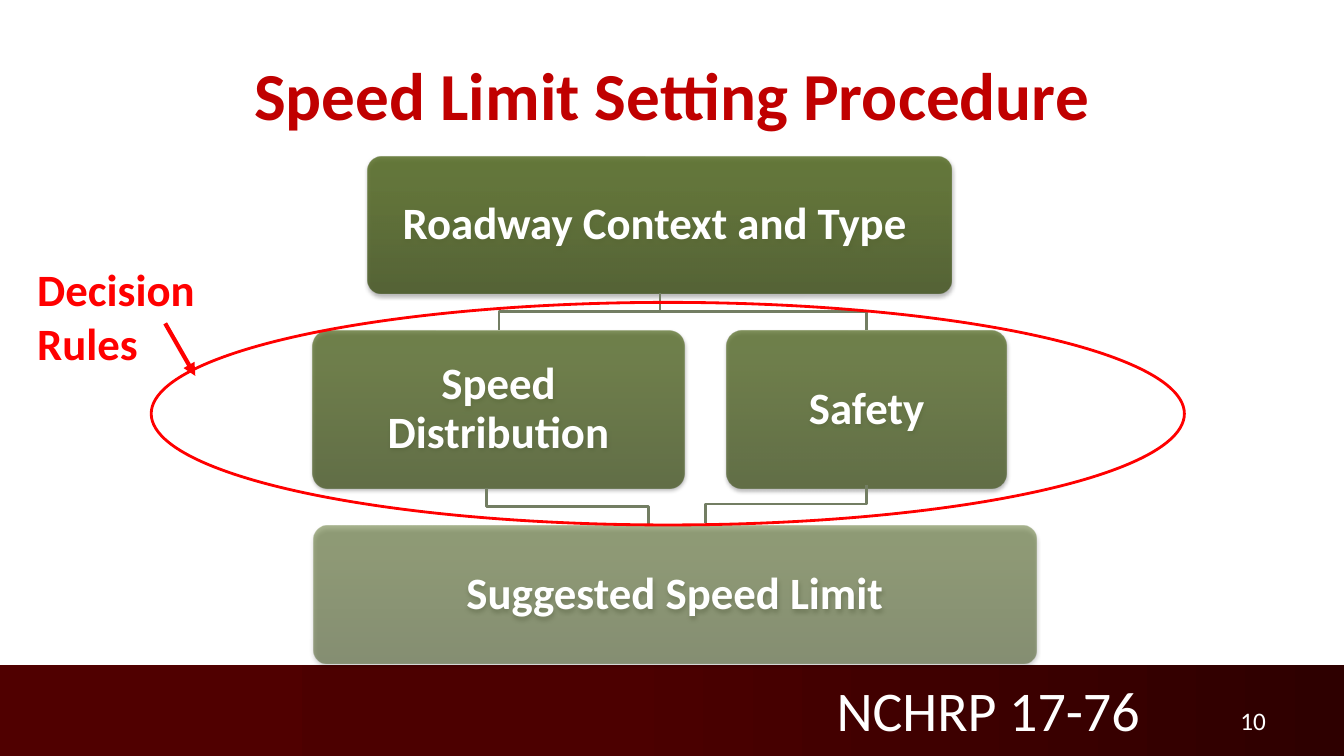
from lxml.etree import SubElement
from pptx import Presentation
from pptx.dml.color import RGBColor
from pptx.enum.shapes import MSO_CONNECTOR, MSO_SHAPE
from pptx.enum.text import MSO_ANCHOR, PP_ALIGN
from pptx.oxml.ns import qn
from pptx.util import Pt

color = RGBColor.from_string


def write(box, text, size, ink, bold=True, align=PP_ALIGN.LEFT, anchor=MSO_ANCHOR.TOP):
    frame = box.text_frame
    frame.word_wrap = True
    frame.vertical_anchor = anchor
    frame.text = text
    para = frame.paragraphs[0]
    para.alignment = align
    font = para.runs[0].font
    font.name = "Calibri"
    font.size = Pt(size)
    font.bold = bold
    font.color.rgb = color(ink)


def paint(shape, stops, angle, opacity=100):
    shape.line.fill.background()
    shape.shadow.inherit = False
    shape.fill.gradient()
    gradient = shape._element.spPr.find(qn("a:gradFill"))
    for child in list(gradient):
        gradient.remove(child)
    stop_list = SubElement(gradient, qn("a:gsLst"))
    for position, shade in stops:
        stop = SubElement(stop_list, qn("a:gs"), pos=str(position * 1000))
        tint = SubElement(stop, qn("a:srgbClr"), val=shade)
        if opacity < 100:
            SubElement(tint, qn("a:alpha"), val=str(opacity * 1000))
    SubElement(gradient, qn("a:lin"), ang=str(angle * 60000), scaled="0")


deck = Presentation()
deck.slide_width = Pt(960)
deck.slide_height = Pt(540)
page = deck.slides.add_slide(deck.slide_layouts[6])

band = page.shapes.add_shape(MSO_SHAPE.RECTANGLE, Pt(0), Pt(475), Pt(960), Pt(65))
paint(band, [(0, "500000"), (45, "4C0000"), (100, "2E0000")], 0)

labels = [
    ("10", 879, 500.5, 36, 29, 18, "FFFFFF", False, PP_ALIGN.LEFT, MSO_ANCHOR.TOP),
    ("NCHRP 17-76", 590.5, 479, 249, 25, 40, "FFFFFF", False, PP_ALIGN.LEFT, MSO_ANCHOR.TOP),
    ("Speed Limit Setting Procedure", 48, 21.6, 864, 90, 48, "C00000", True,
     PP_ALIGN.CENTER, MSO_ANCHOR.MIDDLE),
    ("Decision Rules", 19.5, 183.6, 138, 85, 32, "FF0000", True, PP_ALIGN.LEFT, MSO_ANCHOR.TOP),
]
for text, left, top, width, height, *style in labels:
    label = page.shapes.add_textbox(Pt(left), Pt(top), Pt(width), Pt(height))
    write(label, text, *style)

greens = [(0, "3D4F17"), (80, "50661E"), (100, "50681D")]
steps = [
    ("Roadway Context and Type ", 262.8, 111.6, 417, 98, 80, 35),
    ("Speed Distribution", 223.2, 236.2, 266, 112.5, 70, 38),
    ("Safety", 519.1, 236.2, 200, 113, 70, 38),
    ("Suggested Speed Limit", 223.9, 375.8, 516.5, 98, 50, 38),
]
for text, left, top, width, height, opacity, shadow_opacity in steps:
    step = page.shapes.add_shape(
        MSO_SHAPE.ROUNDED_RECTANGLE, Pt(left), Pt(top), Pt(width), Pt(height))
    step.adjustments[0] = 0.1
    paint(step, greens, 270, opacity)
    effects = step._element.spPr.find(qn("a:effectLst"))
    shadow = SubElement(effects, qn("a:outerShdw"), blurRad=str(Pt(3.1)),
                        dist=str(Pt(1.7)), dir="5400000", rotWithShape="0")
    shade = SubElement(shadow, qn("a:srgbClr"), val="000000")
    SubElement(shade, qn("a:alpha"), val=str(shadow_opacity * 1000))
    write(step, text, 32, "FFFFFF", True, PP_ALIGN.CENTER, MSO_ANCHOR.MIDDLE)
    frame = step.text_frame
    frame.margin_left = frame.margin_right = Pt(12.5)
    frame.margin_top = frame.margin_bottom = Pt(12.5)
    frame.paragraphs[0].line_spacing = 0.9

elbows = [
    (471.5, 209.5, 356.4, 236),
    (471.5, 209.5, 619, 236),
    (619, 346.5, 504, 373.5),
    (347.8, 348.5, 463, 375),
]
for start_x, start_y, end_x, end_y in elbows:
    middle = (start_y + end_y) / 2
    builder = page.shapes.build_freeform(Pt(start_x), Pt(start_y))
    corners = [(start_x, middle), (end_x, middle), (end_x, end_y)]
    builder.add_line_segments([(Pt(x), Pt(y)) for x, y in corners], close=False)
    elbow = builder.convert_to_shape()
    elbow.shadow.inherit = False
    elbow.fill.background()
    elbow.line.color.rgb = color("737E63")
    elbow.line.width = Pt(2)

ring = page.shapes.add_shape(MSO_SHAPE.OVAL, Pt(108), Pt(216), Pt(738), Pt(159))
ring.shadow.inherit = False
ring.fill.background()
ring.line.color.rgb = color("FF0000")
ring.line.width = Pt(2)

arrow = page.shapes.add_connector(
    MSO_CONNECTOR.STRAIGHT, Pt(118), Pt(231), Pt(139.5), Pt(268.5))
arrow.line.color.rgb = color("FF0000")
arrow.line.width = Pt(3)
SubElement(arrow.line._get_or_add_ln(), qn("a:tailEnd"), type="triangle")
SubElement(arrow._element.spPr, qn("a:effectLst"))

deck.save("out.pptx")
